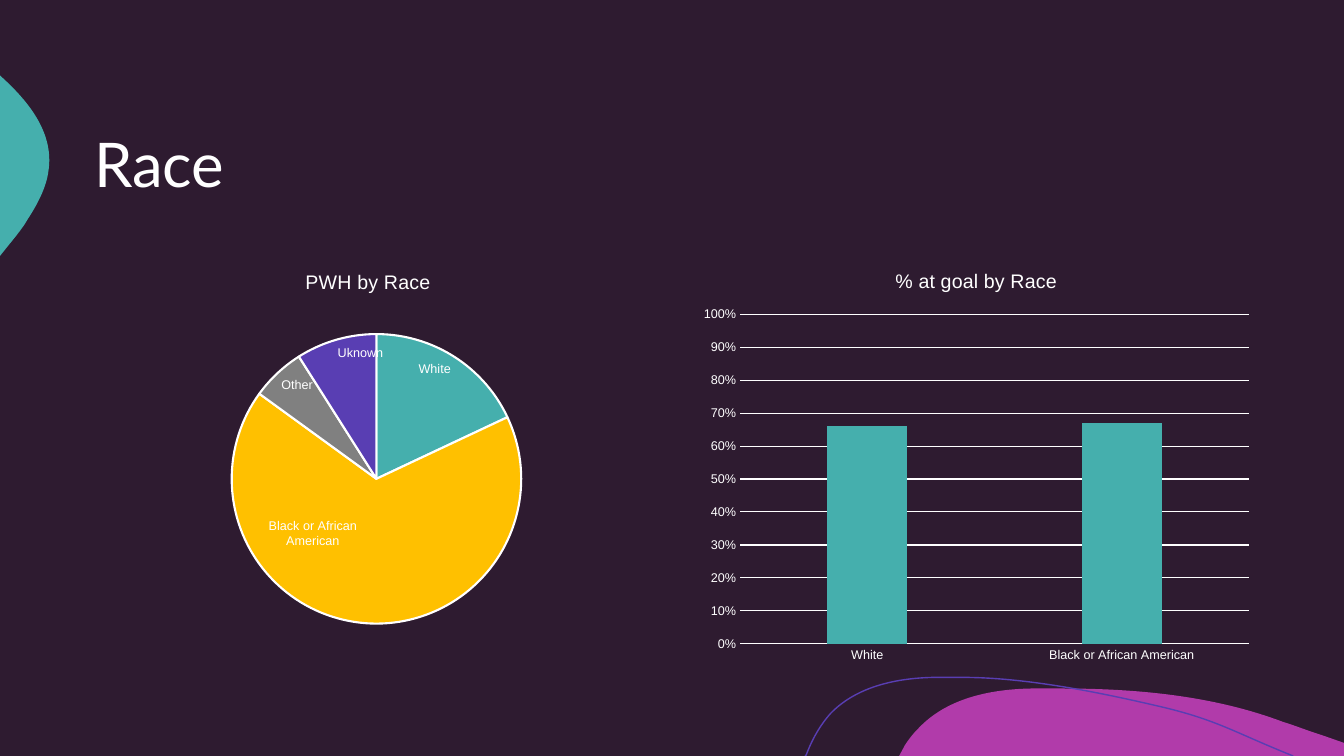
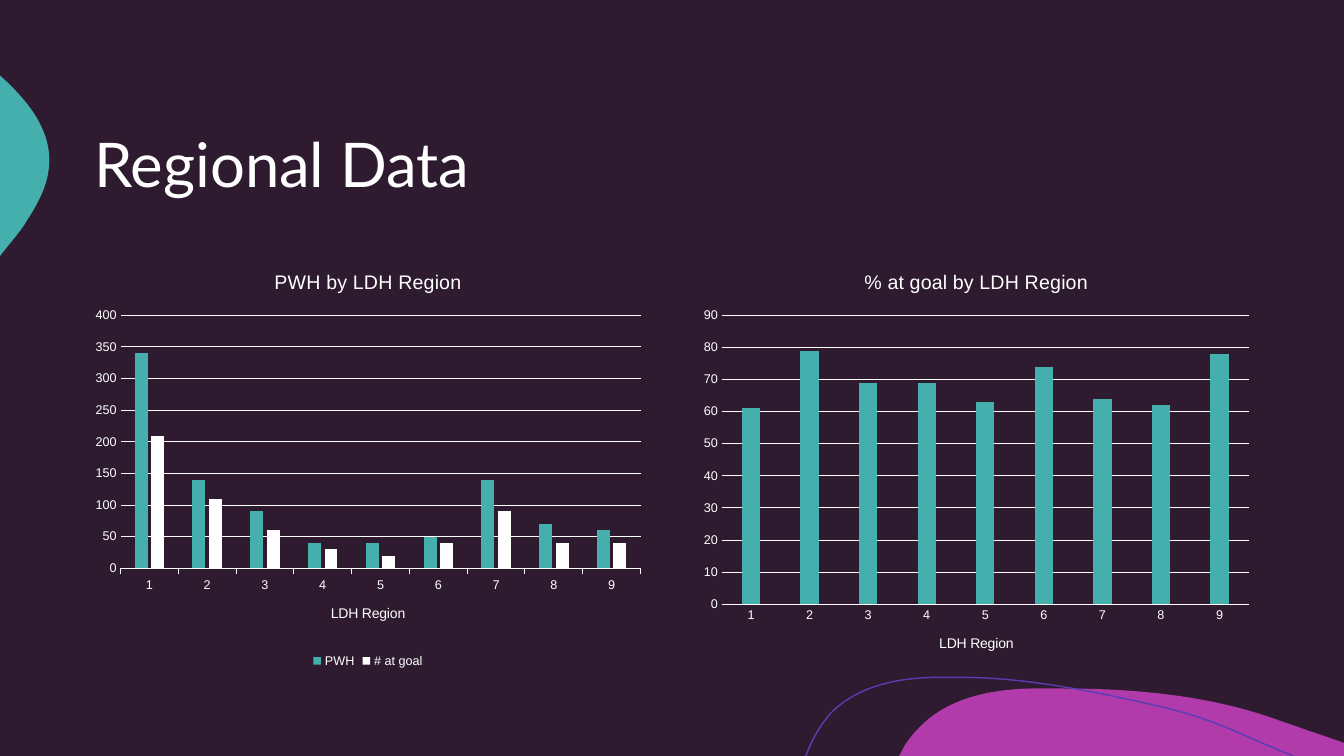
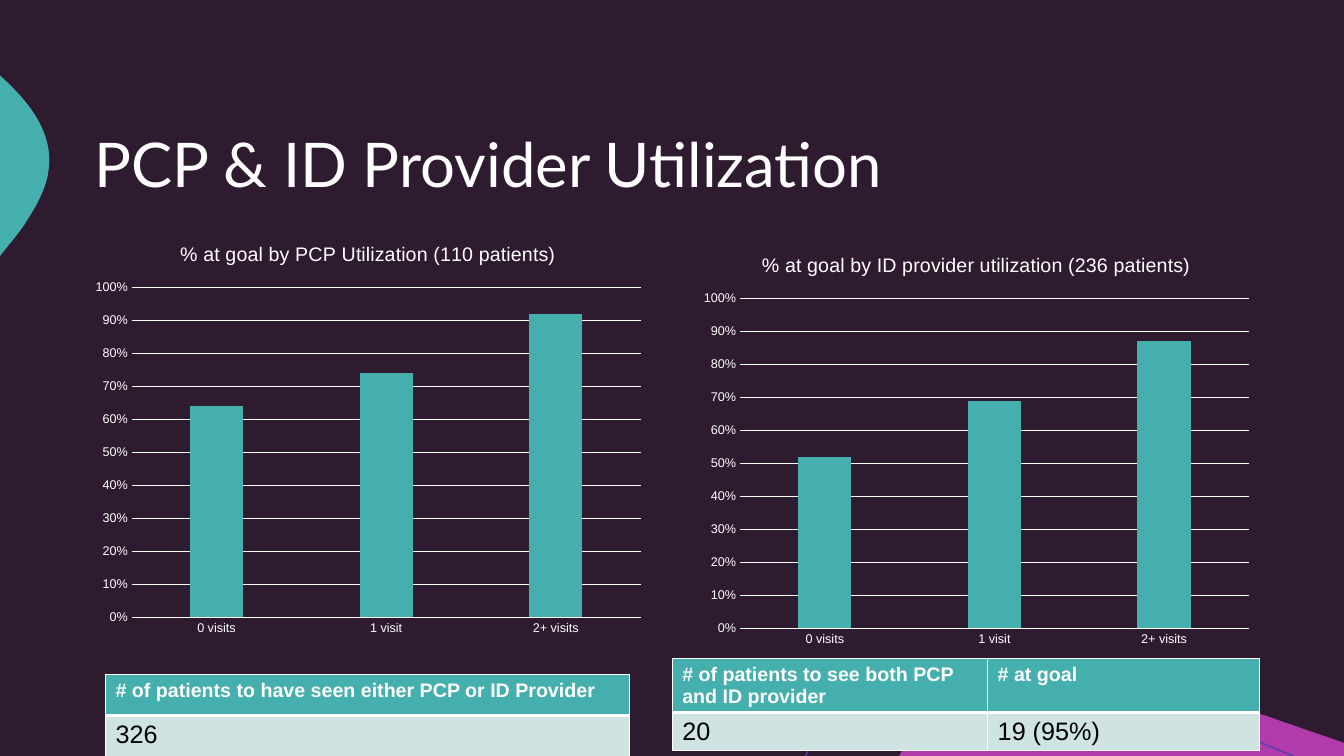
from lxml.etree import SubElement
from pptx import Presentation
from pptx.chart.data import CategoryChartData
from pptx.dml.color import RGBColor
from pptx.enum.chart import XL_CHART_TYPE, XL_LABEL_POSITION, XL_LEGEND_POSITION, XL_TICK_MARK
from pptx.enum.text import MSO_ANCHOR, PP_ALIGN
from pptx.oxml.ns import qn
from pptx.util import Cm, Pt

HUES = {"back": "2E1B30", "teal": "45AFAD", "pink": "B13BAA", "violet": "593EB3",
        "white": "FFFFFF", "gold": "FFC000", "gray": "808080", "pale": "CFE3E3",
        "black": "000000"}
INK = {name: RGBColor.from_string(code) for name, code in HUES.items()}


def trace(shapes, start, steps, close):
    """Draw a freeform in cm; a step is a point, or the three points of a Bezier curve."""
    pen = shapes.build_freeform(Cm(start[0]), Cm(start[1]))
    pen.add_line_segments([(Cm(s[-2]), Cm(s[-1])) for s in steps], close=close)
    shape = pen.convert_to_shape()
    shape.shadow.inherit = False
    for line, step in zip(list(shape.element.iter(qn("a:lnTo"))), steps):
        if len(step) == 6:
            line.tag = qn("a:cubicBezTo")
            line.remove(line[0])
            for x, y in zip(step[::2], step[1::2]):
                SubElement(line, qn("a:pt"), x=str(Cm(x) - shape.left), y=str(Cm(y) - shape.top))
    return shape


def plot_chart(slide, kind, left, top, title, names, rows, fmt="General"):
    """Add a chart with the shared title and text style."""
    data = CategoryChartData(number_format=fmt)
    data.categories = names
    for name, values in rows:
        data.add_series(name, values)
    chart = slide.shapes.add_chart(kind, Cm(left), Cm(top), Cm(14.31), Cm(10.59), data).chart
    chart.font.name, chart.font.size = "Arial", Pt(9)
    chart.font.color.rgb = INK["white"]
    chart.has_legend = len(rows) > 1
    chart.has_title = True
    heads = [(chart.chart_title, title, 14)]
    if kind == XL_CHART_TYPE.COLUMN_CLUSTERED:
        plot = chart.plots[0]
        plot.gap_width, plot.overlap, plot.vary_by_categories = 219, -27, False
        for series, hue in zip(plot.series, ("teal", "white")):
            series.format.fill.solid()
            series.format.fill.fore_color.rgb = INK[hue]
        base, side = chart.category_axis, chart.value_axis
        for axis in (base, side):
            axis.major_tick_mark = axis.minor_tick_mark = XL_TICK_MARK.NONE
        for line in (base.format.line, side.major_gridlines.format.line):
            line.color.rgb, line.width = INK["white"], Pt(0.75)
        side.format.line.fill.background()
        side.tick_labels.number_format = fmt
        side.tick_labels.number_format_is_linked = False
        if fmt == "0%":
            side.minimum_scale, side.maximum_scale = 0, 1
        if "Region" in title:
            heads.append((base.axis_title, "LDH Region", 10))
    if chart.has_legend:
        chart.legend.position = XL_LEGEND_POSITION.BOTTOM
        chart.legend.include_in_layout = False
        base.major_tick_mark = XL_TICK_MARK.OUTSIDE
    for head, text, size in heads:
        head.text_frame.text = text
        font = head.text_frame.paragraphs[0].font
        font.name, font.size, font.bold = "Arial", Pt(size), False
        font.color.rgb = INK["white"]
    return chart


deck = Presentation()
deck.slide_width, deck.slide_height = Cm(33.87), Cm(19.05)

# Shared background, title place and curved ornaments
back = deck.slide_master.background.fill
back.solid()
back.fore_color.rgb = INK["back"]
layout = deck.slide_layouts[5]
for holder in list(layout.placeholders):
    if holder.placeholder_format.idx:
        holder.element.getparent().remove(holder.element)
    else:
        holder.left, holder.top = Cm(2.12), Cm(2.11)
        holder.width, holder.height = Cm(29.64), Cm(4.24)
        holder.text_frame.vertical_anchor = MSO_ANCHOR.MIDDLE

slides = []
for text in ("Race", "Regional Data", "PCP & ID Provider Utilization"):
    slide = deck.slides.add_slide(layout)
    slide.shapes.title.text = text
    para = slide.shapes.title.text_frame.paragraphs[0]
    para.alignment, para.line_spacing = PP_ALIGN.LEFT, 0.9
    para.font.name, para.font.size = "Lato", Pt(44)
    para.font.color.rgb = INK["white"]
    slides.append(slide)
race, region, visits = slides

hill = [(28.65, 17.35, 30.58, 17.53, 32.33, 18.19), (32.66, 18.29, 32.97, 18.42, 33.3, 18.52),
        (33.87, 18.72), (33.87, 19.05), (22.66, 19.05), (22.81, 18.77),
        (22.91, 18.62, 23.01, 18.49, 23.14, 18.36), (23.85, 17.6, 24.94, 17.37, 25.98, 17.35),
        (26.24, 17.35, 26.49, 17.35, 26.77, 17.35)]
drop = [(0.03, 1.93), (0.76, 2.59, 1.37, 3.38, 1.22, 4.32),
        (1.17, 4.72, 0.94, 5.16, 0.69, 5.54), (0.61, 5.69, 0.43, 5.92, 0.2, 6.2), (0, 6.45)]
arc = [(20.32, 19.02), (20.47, 18.62, 20.68, 18.26, 20.93, 17.98),
       (21.59, 17.3, 22.58, 17.09, 23.52, 17.07), (24.26, 17.07),
       (25.96, 17.07, 27.94, 17.5, 29.34, 17.83), (30.71, 18.16, 31.14, 18.47, 32.59, 19.05)]
for start, steps, hue, solid in (((26.77, 17.35), hill, "pink", True),
                                 ((0, 1.9), drop, "teal", True),
                                 ((20.29, 19.05), arc, "violet", False)):
    shape = trace(race.shapes, start, steps, solid)
    if solid:
        shape.fill.solid()
        shape.fill.fore_color.rgb = INK[hue]
        shape.line.fill.background()
    else:
        shape.fill.background()
        shape.line.color.rgb, shape.line.width = INK[hue], Pt(1)
    layout.shapes.element.append(shape.element)

# Race pie
names = ["White", "Black or African American", "Other", "Uknown"]
chart = plot_chart(race, XL_CHART_TYPE.PIE, 2.12, 6.35, "PWH by Race", names,
                   [("Series 1", (18, 67, 6, 9))])
pie = chart.plots[0]
for i, hue in enumerate(("teal", "gold", "gray", "violet")):
    look = pie.series[0].points[i].format
    look.fill.solid()
    look.fill.fore_color.rgb = INK[hue]
    look.line.color.rgb, look.line.width = INK["white"], Pt(1.5)
labels = pie.series[0].data_labels
labels.show_category_name, labels.show_value = True, False
labels.position = XL_LABEL_POSITION.INSIDE_END
label = pie.series[0].points[1].data_label
label.position = XL_LABEL_POSITION.CENTER
for item in (labels, label):
    item.font.size = Pt(9)
    item.font.color.rgb = INK["white"]
mark = next(chart.element.iter(qn("c:dLbl")))
mark.find(qn("c:showVal")).set("val", "0")
mark.find(qn("c:showCatName")).set("val", "1")
area = next(chart.element.iter(qn("c:plotArea")))
for old in area.findall(qn("c:layout")):
    area.remove(old)
for owner, spot, rules in (
        (mark, 1, (("x", "-0.1"), ("y", "-0.04"))),
        (area, 0, (("layoutTarget", "inner"), ("xMode", "edge"), ("yMode", "edge"),
                   ("x", "0.26"), ("y", "0.19"), ("w", "0.51"), ("h", "0.7")))):
    place = SubElement(owner, qn("c:layout"))
    owner.insert(spot, place)
    manual = SubElement(place, qn("c:manualLayout"))
    for tag, value in rules:
        SubElement(manual, qn("c:" + tag)).set("val", value)

# Column charts
zones = [str(n) for n in range(1, 10)]
stays = ["0 visits", "1 visit", "2+ visits"]
for slide, left, top, title, names, rows, fmt in (
        (race, 17.45, 6.32, "% at goal by Race", names[:2],
         [("Series 1", (0.66, 0.67))], "0%"),
        (region, 17.45, 6.35, "% at goal by LDH Region", zones,
         [("Series 1", (61, 79, 69, 69, 63, 74, 64, 62, 78))], "General"),
        (region, 2.12, 6.35, "PWH by LDH Region", zones,
         [("PWH", (340, 140, 90, 40, 40, 50, 140, 70, 60)),
          ("# at goal", (210, 110, 60, 30, 20, 40, 90, 40, 40))], "General"),
        (visits, 2.12, 5.65, "% at goal by PCP Utilization (110 patients)", stays,
         [("Series 1", (0.64, 0.74, 0.92))], "0%"),
        (visits, 17.45, 5.92, "% at goal by ID provider utilization (236 patients)", stays,
         [("Series 1", (0.52, 0.69, 0.87))], "0%")):
    plot_chart(slide, XL_CHART_TYPE.COLUMN_CLUSTERED, left, top, title, names, rows, fmt)

# Patient tables
for left, top, wides, highs, texts in (
        (16.94, 16.59, (7.95, 6.86), (1.24, 0.89),
         ("# of patients to see both PCP and ID provider", "# at goal", "20", "19 (95%)")),
        (2.66, 16.99, (13.21,), (1.04, 1.04),
         ("# of patients to have seen either PCP or ID Provider", "326"))):
    frame = visits.shapes.add_table(2, len(wides), Cm(left), Cm(top),
                                    Cm(sum(wides)), Cm(sum(highs)))
    table = frame.table
    for col, wide in zip(table.columns, wides):
        col.width = Cm(wide)
    for row, high in zip(table.rows, highs):
        row.height = Cm(high)
    boxes = frame.element.iter(qn("a:tc"))
    for i, (cell, box, text) in enumerate(zip(table.iter_cells(), boxes, texts)):
        head = i < len(wides)
        for edge in "LRTB":
            thick = (edge == "B" and head) or (edge == "T" and not head)
            line = SubElement(box.get_or_add_tcPr(), qn("a:ln" + edge),
                              w=str(Pt(3 if thick else 1)))
            SubElement(SubElement(line, qn("a:solidFill")), qn("a:srgbClr"), val=HUES["white"])
        cell.fill.solid()
        cell.fill.fore_color.rgb = INK["teal" if head else "pale"]
        cell.text = text
        font = cell.text_frame.paragraphs[0].font
        font.name, font.size, font.bold = "Arial", Pt(14 if head else 18), head
        font.color.rgb = INK["white" if head else "black"]

deck.save("out.pptx")
